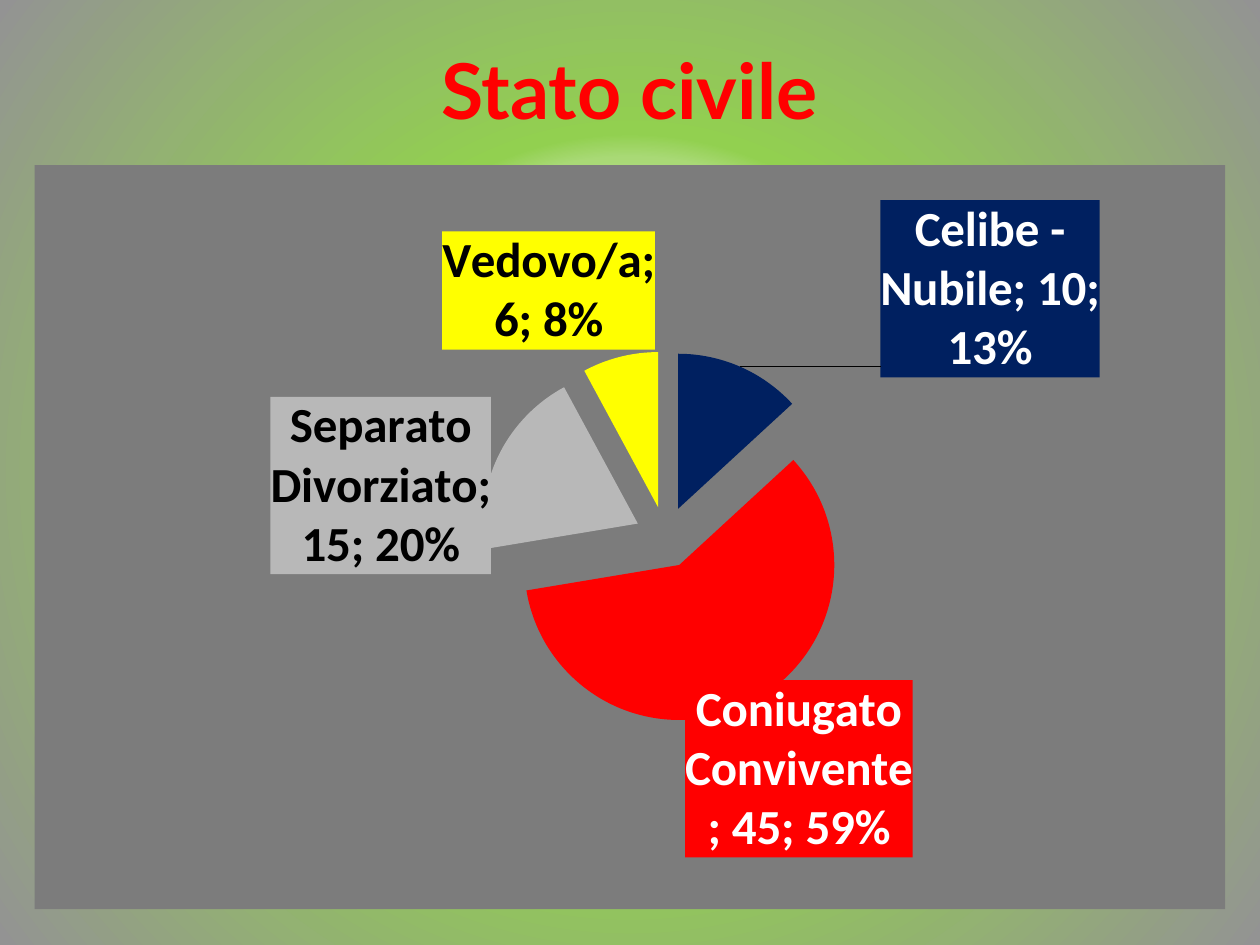
import pptx
import pptx.chart.data
import pptx.dml.color
import pptx.enum.chart
import pptx.enum.text
import pptx.oxml
import pptx.oxml.ns
import pptx.util
from pptx.util import Cm

COLOURS = {"title": "FF0000", "panel": "7C7C7C", "navy": "002060", "red": "FF0000",
           "silver": "B8B8B8", "yellow": "FFFF00", "white": "FFFFFF", "black": "000000"}
TITLE = "Stato civile"
SLICES = [
    ("Celibe - Nubile", 10, "navy", "white", (2.76, 0.35)),
    ("Coniugato Convivente", 45, "red", "white", (-1.32, -0.62)),
    ("Separato Divorziato", 15, "silver", "black", (-0.02, 2.46)),
    ("Vedovo/a", 6, "yellow", "black", (0.74, 0)),
]
BACKDROP = [(0, "F9F9F9"), (40, "A9D976"), (43, "92D050"), (100, "939393")]
CHART_SIZE = (24, 15)
PLOT_AREA = {"x": 0.37, "y": 0.25, "w": 0.32, "h": 0.5}
EXPLOSION = 20


def element(xml):
    prefix, rest = xml[1:].split(":", 1)
    return pptx.oxml.parse_xml(f"<{prefix}:" + rest.replace(
        " ", f' {pptx.oxml.ns.nsdecls("a", "c")} ', 1))


def rgb(name):
    return pptx.dml.color.RGBColor.from_string(COLOURS[name])


def fill_xml(name):
    return (f'<c:spPr ><a:solidFill><a:srgbClr val="{COLOURS[name]}"/></a:solidFill>'
            '<a:ln><a:noFill/></a:ln></c:spPr>')


def layout_xml(values, modes=""):
    parts = "".join(f'<c:{key} val="{value}"/>' for key, value in values.items())
    return f"<c:layout ><c:manualLayout>{modes}{parts}</c:manualLayout></c:layout>"


def paint_background(page):
    fill = page.background.fill
    fill.solid()
    stops = "".join(f'<a:gs pos="{place * 1000}"><a:srgbClr val="{colour}"/></a:gs>'
                    for place, colour in BACKDROP)
    gradient = element(
        f'<a:gradFill rotWithShape="1"><a:gsLst>{stops}</a:gsLst><a:path path="circle">'
        '<a:fillToRect l="50000" t="50000" r="50000" b="50000"/></a:path></a:gradFill>')
    solid = page.element.find(".//" + pptx.oxml.ns.qn("a:solidFill"))
    solid.getparent().replace(solid, gradient)


def add_title(page):
    title = page.shapes.title
    title.left, title.top, title.width, title.height = Cm(1.09), Cm(0.72), Cm(23.2), Cm(2.13)
    title.text_frame.text = TITLE
    title.text_frame.vertical_anchor = pptx.enum.text.MSO_ANCHOR.MIDDLE
    para = title.text_frame.paragraphs[0]
    para.alignment = pptx.enum.text.PP_ALIGN.CENTER
    para.font.name, para.font.size, para.font.bold = "Lato", pptx.util.Pt(44), True
    para.font.color.rgb = rgb("title")


def add_label(series, labels, index, fill, ink, offset):
    flags = "".join(f'<c:show{key} val="{value}"/>' for key, value in (
        ("LegendKey", 0), ("Val", 1), ("CatName", 1), ("SerName", 0),
        ("Percent", 1), ("BubbleSize", 0)))
    shares = [length / whole for length, whole in zip(offset, CHART_SIZE)]
    labels.insert(index, element(
        f'<c:dLbl ><c:idx val="{index}"/>{layout_xml(dict(zip("xy", shares)))}'
        f'{fill_xml(fill)}<c:dLblPos val="outEnd"/>{flags}'
        '<c:separator>; </c:separator></c:dLbl>'))
    font = series.points[index].data_label.font
    font.name, font.size, font.bold = "Calibri", pptx.util.Pt(28), True
    font.color.rgb = rgb(ink)


def add_pie(page):
    data = pptx.chart.data.CategoryChartData()
    data.categories = [item[0] for item in SLICES]
    data.add_series("Series 1", [item[1] for item in SLICES])
    chart = page.shapes.add_chart(pptx.enum.chart.XL_CHART_TYPE.PIE, Cm(0.7), Cm(3.33),
                                  *map(Cm, CHART_SIZE), data).chart
    chart.has_legend = chart.has_title = False
    chart.font.name, chart.font.size = "Calibri", pptx.util.Pt(10)
    chart.font.color.rgb = rgb("black")
    qn = pptx.oxml.ns.qn
    space = chart.element
    space.find(qn("c:txPr")).addprevious(element(fill_xml("panel")))
    plot_area = space.find(".//" + qn("c:plotArea"))
    for old in plot_area.findall(qn("c:layout")):
        plot_area.remove(old)
    modes = '<c:layoutTarget val="inner"/><c:xMode val="edge"/><c:yMode val="edge"/>'
    plot_area.insert(0, element(layout_xml(PLOT_AREA, modes)))

    series = chart.plots[0].series[0]
    for index, item in enumerate(SLICES):
        slice_fill = series.points[index].format.fill
        slice_fill.solid()
        slice_fill.fore_color.rgb = rgb(item[2])
    ser = space.find(".//" + qn("c:ser"))
    ser.find(qn("c:tx")).addnext(element(f'<c:explosion val="{EXPLOSION}"/>'))
    shared = series.data_labels
    shared.show_value = shared.show_percentage = shared.show_category_name = True
    shared.position = pptx.enum.chart.XL_LABEL_POSITION.OUTSIDE_END
    shared.font.size, shared.font.bold = pptx.util.Pt(28), True
    labels = ser.find(qn("c:dLbls"))
    for index, (_, _, fill, ink, offset) in enumerate(SLICES):
        add_label(series, labels, index, fill, ink, offset)


def main():
    """Build the marital status slide."""
    deck = pptx.Presentation()
    deck.slide_width, deck.slide_height = Cm(25.4), Cm(19.05)
    page = deck.slides.add_slide(deck.slide_layouts[5])
    paint_background(page)
    add_title(page)
    add_pie(page)
    deck.save("out.pptx")


if __name__ == "__main__":
    main()
